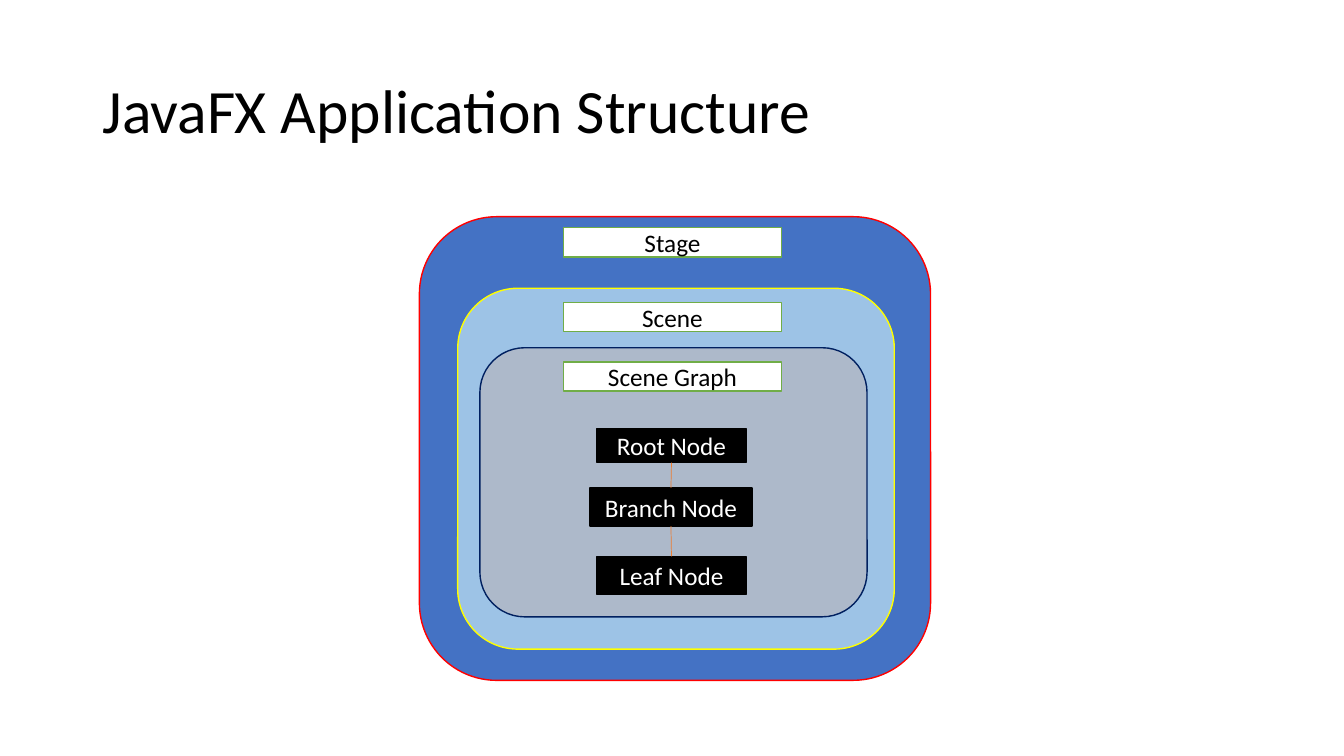
from pptx import Presentation
from pptx.dml.color import RGBColor
from pptx.enum.shapes import MSO_CONNECTOR as LINK, MSO_SHAPE as SHAPE
from pptx.enum.text import MSO_ANCHOR as ANCHOR, PP_ALIGN as ALIGN
from pptx.oxml.ns import qn
from pptx.util import Emu, Pt

PX = 9144  # 100 px to the inch

# Each layer: place inside the layer around it, label top, fill, line
LAYERS = [
    ("Stage", (0, 0, 507, 460), 11, "4472C4", "FF0000"),
    ("Scene", (38, 71, 433, 358), 14, "9DC3E6", "FFFF00"),
    ("Scene Graph", (22, 59, 384, 267), 14, "ADB9CA", "002060"),
]
# Each node: place inside the scene graph
NODES = [
    ("Root Node", (116, 80, 148, 34)),
    ("Branch Node", (109, 139, 161, 38)),
    ("Leaf Node", (116, 207, 148, 38)),
]


def px(*nums):
    return [Emu(n * PX) for n in nums]


def rgb(code):
    return RGBColor.from_string(code)


def write(frame, text, size, color, align):
    frame.word_wrap = True
    frame.vertical_anchor = ANCHOR.MIDDLE
    para = frame.paragraphs[0]
    para.text, para.alignment = text, align
    font = para.runs[0].font
    for key, val in {"name": "Calibri", "size": Pt(size)}.items():
        setattr(font, key, val)
    font.color.rgb = rgb(color)
    return para


def block(slide, kind, box, fill, line):
    shape = slide.shapes.add_shape(kind, *px(*box))
    shape.shadow.inherit = False
    shape.fill.solid()
    shape.fill.fore_color.rgb = rgb(fill)
    shape.line.color.rgb = rgb(line)
    shape.line.width = Pt(1)
    return shape


def label(slide, text, box, fill, line, color):
    shape = block(slide, SHAPE.RECTANGLE, box, fill, line)
    write(shape.text_frame, text, 18, color, ALIGN.CENTER)
    return shape


def link(slide, top, low):
    """Join the bottom of one node to the top of the next."""
    line = slide.shapes.add_connector(LINK.STRAIGHT, 0, 0, 0, 0)
    line.begin_connect(top, 2)
    line.end_connect(low, 0)
    line.line.color.rgb = rgb("ED7D31")
    line.line.width = Pt(0.5)
    props = line._element.spPr
    props.append(props.makeelement(qn("a:effectLst"), {}))


def title(slide, box, text):
    frame = slide.shapes.add_textbox(*px(*box)).text_frame
    write(frame, text, 44, "000000", ALIGN.LEFT).line_spacing = 0.9


def nodes(slide, left, top):
    made = [
        label(slide, text, (left + x, top + y, w, h), "000000", "000000", "FFFFFF")
        for text, (x, y, w, h) in NODES
    ]
    for pair in zip(made, made[1:]):
        link(slide, *pair)


def layers(slide, left, top):
    """Nest the layers, with their labels in one column."""
    column = left + 143
    for text, (x, y, w, h), drop, fill, line in LAYERS:
        left, top = left + x, top + y
        block(slide, SHAPE.ROUNDED_RECTANGLE, (left, top, w, h), fill, line)
        label(slide, text, (column, top + drop, 216, 29), "FFFFFF", "70AD47", "000000")
    nodes(slide, left, top)


def main():
    deck = Presentation()
    deck.slide_width, deck.slide_height = px(1333, 750)
    slide = deck.slides.add_slide(deck.slide_layouts[6])
    title(slide, (92, 40, 1150, 145), "JavaFX Application Structure")
    layers(slide, 416, 215)
    deck.save("out.pptx")


if __name__ == "__main__":
    main()
